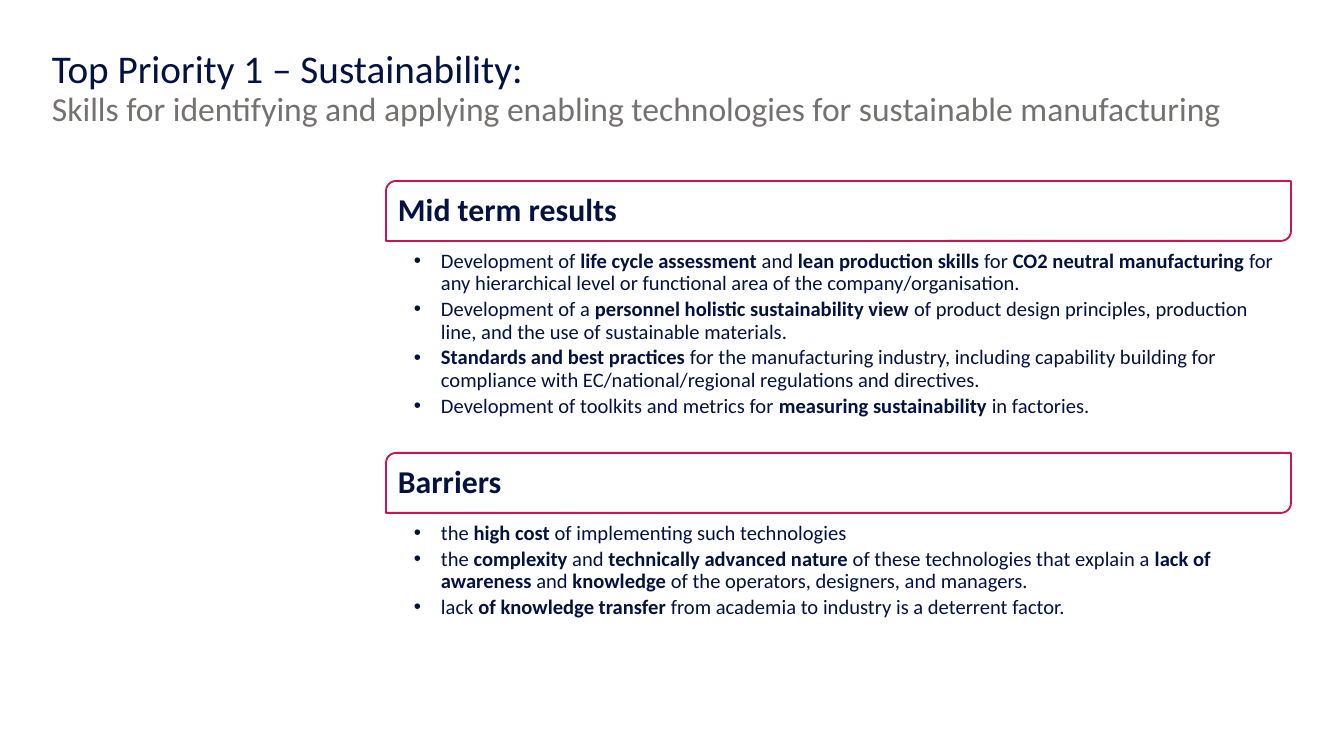
from lxml import etree
from pptx import Presentation
from pptx import util as u
from pptx.dml.color import RGBColor
from pptx.enum import shapes, text
from pptx.oxml.ns import qn

PX = 914400 / 134.4
NAVY, GREY, CRIMSON, WHITE = "031241", "767171", "CC154F", "FFFFFF"

SECTIONS = [
    ("Mid term results", 212, [
        "Development of **life cycle assessment** and **lean production skills** for "
        "**CO2 neutral manufacturing** for any hierarchical level or functional area "
        "of the company/organisation.",
        "Development of a **personnel holistic sustainability view** of product design "
        "principles, production line, and the use of sustainable materials.",
        "**Standards and best practices** for the manufacturing industry, including "
        "capability building for compliance with EC/national/regional regulations and "
        "directives.",
        "Development of toolkits and metrics for **measuring sustainability** in factories.",
    ]),
    ("Barriers", 114, [
        "the **high cost** of implementing such technologies",
        "the **complexity** and **technically advanced nature** of these technologies "
        "that explain a **lack of awareness** and **knowledge** of the operators, "
        "designers, and managers.",
        "lack **of knowledge transfer** from academia to industry is a deterrent factor.",
    ]),
]


def px(length):
    return u.Emu(round(length * PX))


def color(value):
    return RGBColor.from_string(value)


class SlideBuilder:
    def __init__(self, slide, font="Calibri"):
        self.slide = slide
        self.font = font

    def text_frame(self, box, insets=(0, 0, 0, 0), anchor=text.MSO_ANCHOR.TOP):
        frame = self.slide.shapes.add_textbox(*map(px, box)).text_frame
        left, top, right, bottom = map(px, insets)
        formats = {"word_wrap": True, "vertical_anchor": anchor,
                   "margin_left": left, "margin_top": top,
                   "margin_right": right, "margin_bottom": bottom}
        for name, value in formats.items():
            setattr(frame, name, value)
        return frame

    def run(self, paragraph, words, size, ink=NAVY, bold=False):
        run = paragraph.add_run()
        run.text = words
        formats = {"name": self.font, "size": u.Pt(size), "bold": bold}
        for name, value in formats.items():
            setattr(run.font, name, value)
        run.font.color.rgb = color(ink)

    def title(self, box, heading, subheading):
        paragraph = self.text_frame(box).paragraphs[0]
        paragraph.line_spacing = 0.9
        self.run(paragraph, heading, 21)
        paragraph.add_line_break()
        self.run(paragraph, subheading, 18, GREY)

    def banner(self, box, label):
        left, top, width, height = box
        frame = self.slide.shapes.add_shape(
            shapes.MSO_SHAPE.ROUND_2_DIAG_RECTANGLE, *map(px, box))
        frame.shadow.inherit = False
        frame.fill.solid()
        frame.fill.fore_color.rgb = color(WHITE)
        frame.line.color.rgb = color(CRIMSON)
        frame.line.width = u.Pt(1)
        label_box = (left + 3, top + 3, width - 6, height - 6)
        paragraph = self.text_frame(label_box, (9, 9, 9, 9),
                                    text.MSO_ANCHOR.MIDDLE).paragraphs[0]
        paragraph.line_spacing = 0.9
        self.run(paragraph, label, 17, bold=True)

    def bullets(self, box, items):
        """Write a bulleted list; words between ** marks are bold."""
        frame = self.text_frame(box, (28, 10, 4, 1))
        for index, item in enumerate(items):
            paragraph = frame.add_paragraph() if index else frame.paragraphs[0]
            paragraph.line_spacing = 0.9
            paragraph.space_after = u.Pt(2)
            properties = paragraph._p.get_or_add_pPr()
            properties.set("marL", str(px(27)))
            properties.set("indent", str(px(-27)))
            etree.SubElement(properties, qn("a:buFont"), typeface="Arial")
            etree.SubElement(properties, qn("a:buChar"), char="•")
            for part, words in enumerate(item.split("**")):
                if words:
                    self.run(paragraph, words, 11, bold=part % 2 == 1)


def main():
    deck = Presentation()
    deck.slide_width, deck.slide_height = px(1344), px(756)
    builder = SlideBuilder(deck.slides.add_slide(deck.slide_layouts[6]))
    builder.title((52, 50, 1231, 349), "Top Priority 1 – Sustainability: ",
                  "Skills for identifying and applying enabling technologies "
                  "for sustainable manufacturing")

    left, top, width, banner_height = 386, 181, 905, 60
    for heading, list_height, items in SECTIONS:
        builder.banner((left, top, width, banner_height), heading)
        top += banner_height
        builder.bullets((left, top, width, list_height), items)
        top += list_height
    deck.save("out.pptx")


if __name__ == "__main__":
    main()
